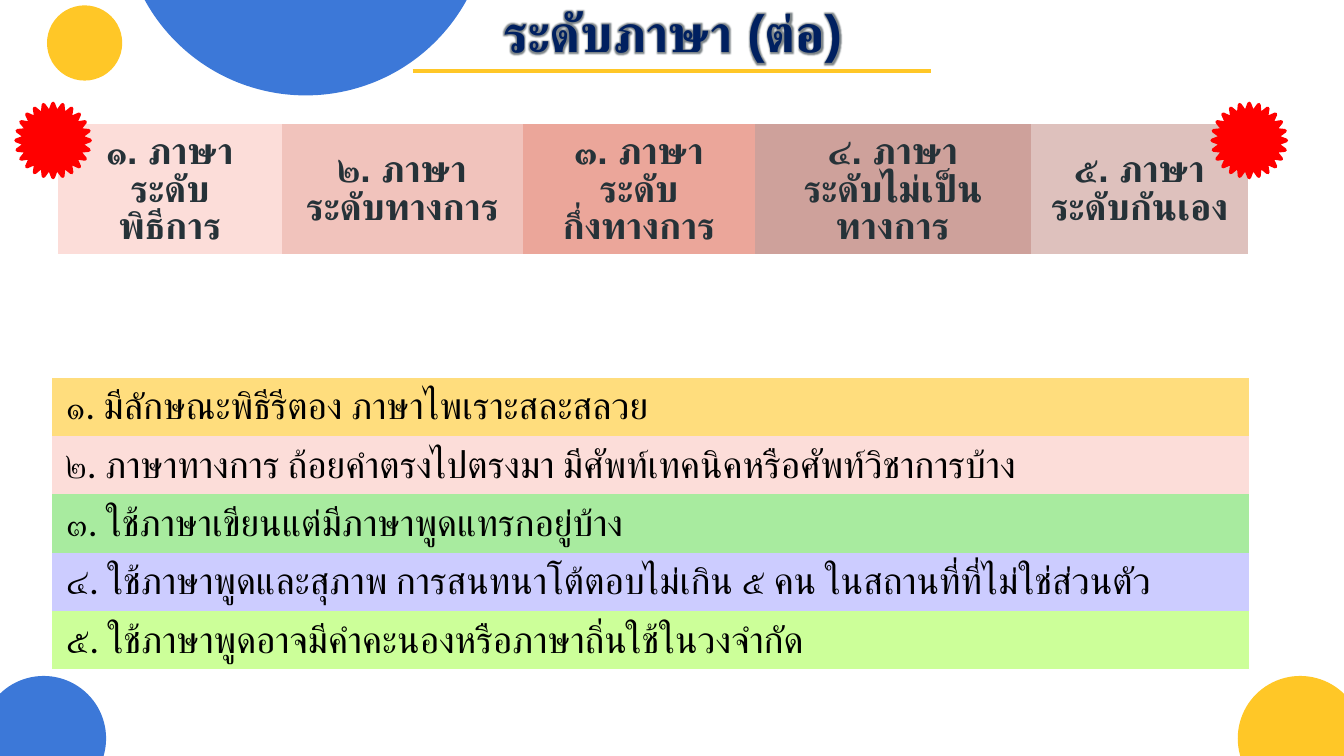
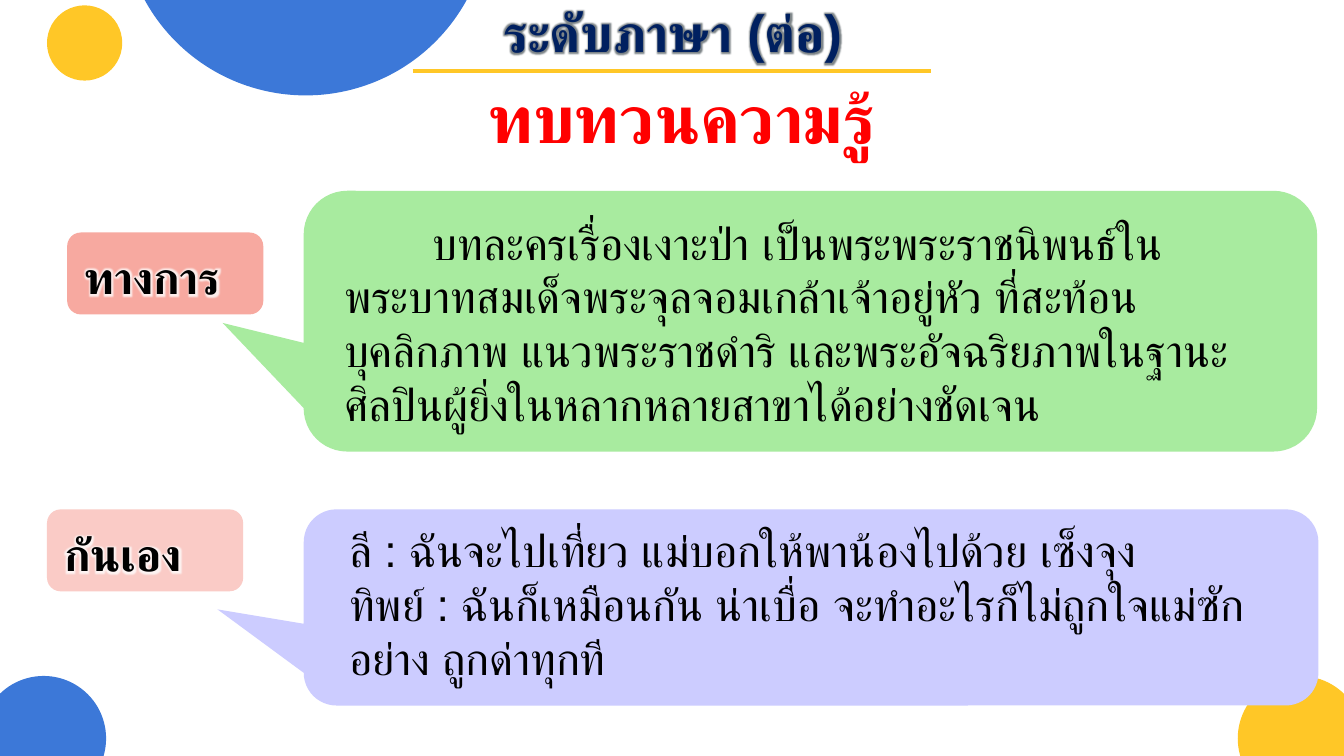
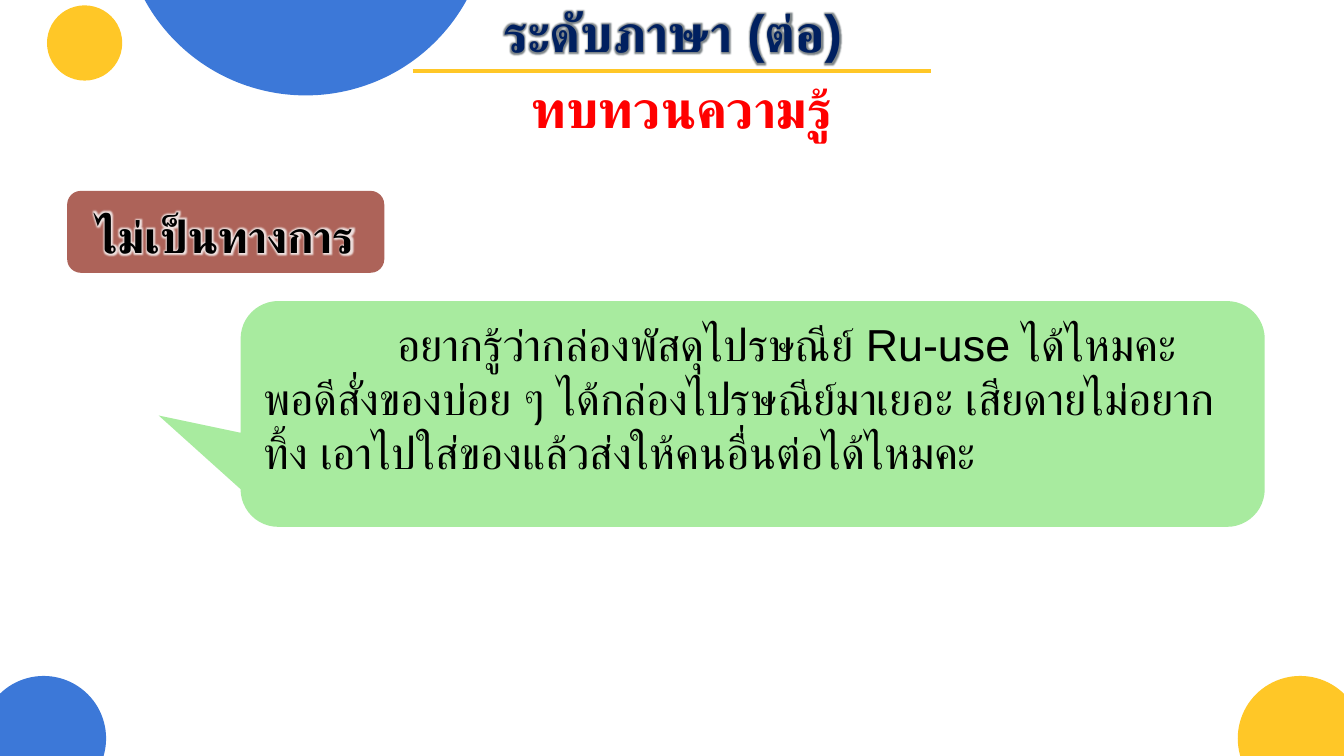
from lxml import etree
from pptx import Presentation
from pptx.dml.color import RGBColor
from pptx.enum.lang import MSO_LANGUAGE_ID as Lang
from pptx.enum.shapes import MSO_CONNECTOR as Line, MSO_SHAPE as Shape
from pptx.enum.text import MSO_ANCHOR as Anchor, MSO_AUTO_SIZE as AutoSize, PP_ALIGN as Align
from pptx.oxml.ns import qn
from pptx.util import Inches, Pt

COLORS = {
    "blue": "3C78D8", "yellow": "FFC727", "navy": "002060", "red": "FF0000",
    "black": "000000", "white": "FFFFFF", "slate": "263238", "pale": "EBEBEB",
    "blush": "FCDDD9", "rose": "F1C3BC", "coral": "EBA69A", "clay": "CEA19B",
    "dust": "DEC1BD", "sand": "FFDD7D", "green": "A8EB9F", "lilac": "CCCCFF",
    "lime": "CCFF99", "salmon": "F7A9A0", "pink": "FACBC6", "brick": "AD6359",
}


def style(size, color="black", bold=False, name="Arial", outline=None, glow=None):
    return {
        "font": {"size": Pt(size), "bold": bold, "name": name, "language_id": Lang.THAI},
        "color": color, "outline": outline, "glow": glow,
    }


TITLE = style(28, "navy", True, outline=("pale", 1), glow=("slate", 5, 60))
REVIEW_LARGE = style(36, "red", True, outline=("pale", 1))
REVIEW_SMALL = style(28, "red", True, outline=("pale", 1))
SPEECH = style(24, outline=("black", 0.75))
LABEL = style(24, bold=True, outline=("black", 0.75), glow=("white", 5, 80))
LEVEL = style(20, "slate", True)
FEATURE = style(20, name="Calibri")

CIRCLES = [
    (-0.14, 5.03, 0.93, "blue"), (0.91, -2.02, 2.73, "blue"),
    (0.35, 0.04, 0.56, "yellow"), (9.21, 5.03, 0.93, "yellow"),
]
LEVELS = [
    ("๑. ภาษา", "ระดับ\vพิธีการ", "blush", 1.67),
    ("๒. ภาษา", "ระดับทางการ", "rose", 1.79),
    ("๓. ภาษา", "ระดับ\vกึ่งทางการ", "coral", 1.73),
    ("๔. ภาษา", "ระดับไม่เป็นทางการ", "clay", 2.05),
    ("๕. ภาษา", "ระดับกันเอง", "dust", 1.62),
]
FEATURES = [
    ("๑. มีลักษณะพิธีรีตอง ภาษาไพเราะสละสลวย", "sand"),
    ("๒. ภาษาทางการ ถ้อยคำตรงไปตรงมา มีศัพท์เทคนิคหรือศัพท์วิชาการบ้าง", "blush"),
    ("๓. ใช้ภาษาเขียนแต่มีภาษาพูดแทรกอยู่บ้าง", "green"),
    ("๔. ใช้ภาษาพูดและสุภาพ การสนทนาโต้ตอบไม่เกิน ๕ คน ในสถานที่ที่ไม่ใช่ส่วนตัว", "lilac"),
    ("๕. ใช้ภาษาพูดอาจมีคำคะนองหรือภาษาถิ่นใช้ในวงจำกัด", "lime"),
]
ROW_HEIGHT = 0.41


def rgb(color):
    return RGBColor.from_string(COLORS[color])


def inches(values):
    return [Inches(value) for value in values]


def set_all(target, values):
    for attribute, value in values.items():
        setattr(target, attribute, value)


def add_color(parent, color, alpha=100):
    node = etree.SubElement(parent, qn("a:srgbClr"), val=COLORS[color])
    if alpha < 100:
        etree.SubElement(node, qn("a:alpha"), val=str(alpha * 1000))


def format_run(run, look):
    """Apply font values, the complex-script face, and any outline or glow."""
    set_all(run.font, look["font"])
    run.font.color.rgb = rgb(look["color"])
    props = run._r.get_or_add_rPr()
    etree.SubElement(props, qn("a:cs"), typeface=look["font"]["name"])
    if look["glow"]:
        color, radius, alpha = look["glow"]
        effects = etree.Element(qn("a:effectLst"))
        glow = etree.SubElement(effects, qn("a:glow"), rad=str(Pt(radius)))
        add_color(glow, color, alpha)
        props.find(qn("a:solidFill")).addnext(effects)
    if look["outline"]:
        color, width = look["outline"]
        outline = etree.Element(qn("a:ln"), w=str(Pt(width)))
        add_color(etree.SubElement(outline, qn("a:solidFill")), color)
        props.insert(0, outline)


def write(frame, lines, look, align=Align.LEFT, indent=0, later_spacing=None):
    """Fill a text frame, one paragraph per line; later_spacing skips the first."""
    for index, line in enumerate(lines):
        paragraph = frame.add_paragraph() if index else frame.paragraphs[0]
        paragraph.text = line
        set_all(paragraph, {"alignment": align,
                            "line_spacing": later_spacing if index else None})
        if indent:
            paragraph._p.get_or_add_pPr().set("indent", str(Inches(indent)))
        for run in paragraph.runs:
            format_run(run, look)


def add_shape(slide, kind, box, fill=None, line=None):
    shape = slide.shapes.add_shape(kind, *inches(box))
    shape.shadow.inherit = False
    if fill:
        shape.fill.solid()
        shape.fill.fore_color.rgb = rgb(fill)
    else:
        shape.fill.background()
    if line:
        shape.line.color.rgb = rgb(line)
        shape.line.width = Pt(2)
    else:
        shape.line.fill.background()
    return shape


def add_text(slide, box, lines, look, align=Align.LEFT, **frame_values):
    frame = slide.shapes.add_textbox(*inches(box)).text_frame
    set_all(frame, {"word_wrap": True, **frame_values})
    write(frame, lines, look, align)


def add_label(slide, box, text, fill, align=Align.LEFT):
    frame = add_shape(slide, Shape.ROUNDED_RECTANGLE, box, fill).text_frame
    set_all(frame, {"word_wrap": True, "vertical_anchor": Anchor.BOTTOM})
    write(frame, [text], LABEL, align)


def add_callout(slide, box, fill, pointer):
    callout = add_shape(slide, Shape.ROUNDED_RECTANGULAR_CALLOUT, box, fill)
    for index, value in enumerate((*pointer, 0.167)):
        callout.adjustments[index] = value


def add_passage(slide, box, text, indent):
    frame = add_shape(slide, Shape.ROUNDED_RECTANGLE, box).text_frame
    set_all(frame, {"word_wrap": True, "auto_size": AutoSize.SHAPE_TO_FIT_TEXT,
                    "vertical_anchor": Anchor.TOP})
    write(frame, [text], SPEECH, indent=indent)


def add_plain_table(slide, box, rows, widths):
    """Add a table without banding whose rows grow to fit their text."""
    holder = slide.shapes.add_table(rows, len(widths), *inches(box))
    table = holder.table
    set_all(table, {"first_row": False, "horz_banding": False})
    for column, width in zip(table.columns, widths):
        column.width = Inches(width)
    for row in table.rows:
        row.height = Inches(ROW_HEIGHT)
    holder.height = Inches(box[3])
    return table


def fill_cell(cell, lines, look, fill, anchor=Anchor.TOP, **paragraph_values):
    props = cell._tc.get_or_add_tcPr()
    for side in ("lnL", "lnR", "lnT", "lnB"):
        etree.SubElement(etree.SubElement(props, qn(f"a:{side}"), w="0"), qn("a:noFill"))
    cell.fill.solid()
    cell.fill.fore_color.rgb = rgb(fill)
    cell.vertical_anchor = anchor
    write(cell.text_frame, lines, look, **paragraph_values)


def add_title(slide):
    margins = {f"margin_{side}": Inches(0.1) for side in ("left", "right", "top", "bottom")}
    add_text(slide, (3.37, -0.1, 3.27, 0.63), ["ระดับภาษา (ต่อ)"], TITLE, Align.CENTER, **margins)
    rule = slide.shapes.add_connector(Line.STRAIGHT, *inches((3.07, 0.53, 6.93, 0.53)))
    rule.line.color.rgb = rgb("yellow")
    rule.line.width = Pt(2.25)
    etree.SubElement(rule._element.spPr, qn("a:effectLst"))


def add_review_heading(slide, height, look):
    add_text(slide, (2.85, 0.52, 4.45, height), ["ทบทวนความรู้"], look, Align.CENTER,
             auto_size=AutoSize.SHAPE_TO_FIT_TEXT)


def new_slide(deck):
    slide = deck.slides.add_slide(deck.slide_layouts[6])
    for left, top, size, color in CIRCLES:
        add_shape(slide, Shape.OVAL, (left, top, size, size), color)
    return slide


def build_levels(slide):
    widths = [width for *_, width in LEVELS]
    levels = add_plain_table(slide, (0.43, 0.92, 8.85, 1.1), 1, widths)
    for column, (number, name, fill, _) in enumerate(LEVELS):
        fill_cell(levels.cell(0, column), [number, name], LEVEL, fill, Anchor.MIDDLE,
                  align=Align.CENTER, later_spacing=0.9)
    for left in (0.12, 9.02):
        add_shape(slide, Shape.STAR_24_POINT, (left, 0.77, 0.55, 0.55), "red", "red")
    add_title(slide)
    features = add_plain_table(slide, (0.39, 2.81, 8.9, 2.17), len(FEATURES), [8.9])
    for row, (text, fill) in enumerate(FEATURES):
        fill_cell(features.cell(row, 0), [text], FEATURE, fill)


def build_formal_and_intimate(slide):
    add_callout(slide, (2.26, 3.79, 7.55, 1.46), "lilac", (-0.585, 0.01))
    add_callout(slide, (2.26, 1.42, 7.54, 1.94), "green", (-0.58, 0.007))
    add_review_heading(slide, 0.71, REVIEW_LARGE)
    add_passage(
        slide, (2.37, 1.46, 7.03, 1.9),
        "บทละครเรื่องเงาะป่า เป็นพระพระราชนิพนธ์ในพระบาทสมเด็จพระจุลจอมเกล้าเจ้าอยู่หัว "
        "ที่สะท้อนบุคลิกภาพ แนวพระราชดำริ และพระอัจฉริยภาพในฐานะศิลปินผู้ยิ่งในหลากหลายสาขาได้อย่างชัดเจน",
        indent=0.66)
    add_text(slide, (2.5, 3.84, 7.07, 1.31), [
        "ลี : ฉันจะไปเที่ยว แม่บอกให้พาน้องไปด้วย เซ็งจุง",
        "ทิพย์ : ฉันก็เหมือนกัน น่าเบื่อ จะทำอะไรก็ไม่ถูกใจแม่ซักอย่าง ถูกด่าทุกที",
    ], SPEECH, auto_size=AutoSize.SHAPE_TO_FIT_TEXT)
    add_label(slide, (0.5, 1.73, 1.46, 0.61), "ทางการ", "salmon")
    add_label(slide, (0.35, 3.79, 1.46, 0.61), "กันเอง", "pink")
    add_title(slide)


def build_informal(slide):
    add_callout(slide, (1.79, 2.24, 7.62, 1.68), "green", (-0.58, 0.007))
    add_review_heading(slide, 0.57, REVIEW_SMALL)
    add_passage(
        slide, (1.79, 2.24, 7.62, 1.45),
        "อยากรู้ว่ากล่องพัสดุไปรษณีย์ Ru-use ได้ไหมคะ พอดีสั่งของบ่อย ๆ "
        "ได้กล่องไปรษณีย์มาเยอะ เสียดายไม่อยากทิ้ง เอาไปใส่ของแล้วส่งให้คนอื่นต่อได้ไหมคะ",
        indent=1)
    add_label(slide, (0.5, 1.42, 2.36, 0.61), "ไม่เป็นทางการ", "brick", Align.CENTER)
    add_title(slide)


def main():
    deck = Presentation()
    set_all(deck, {"slide_width": Inches(10), "slide_height": Inches(10 * 9 / 16)})
    for build in (build_levels, build_formal_and_intimate, build_informal):
        build(new_slide(deck))
    deck.save("out.pptx")


if __name__ == "__main__":
    main()
